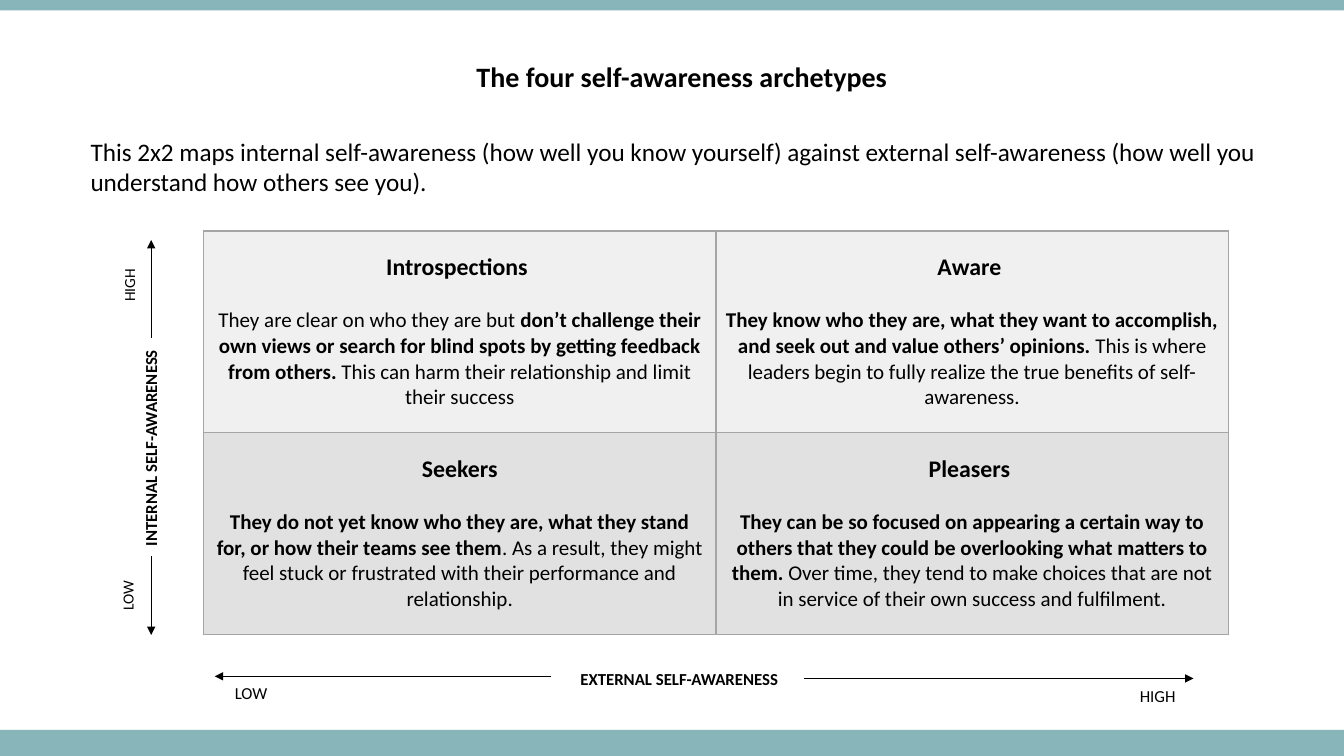
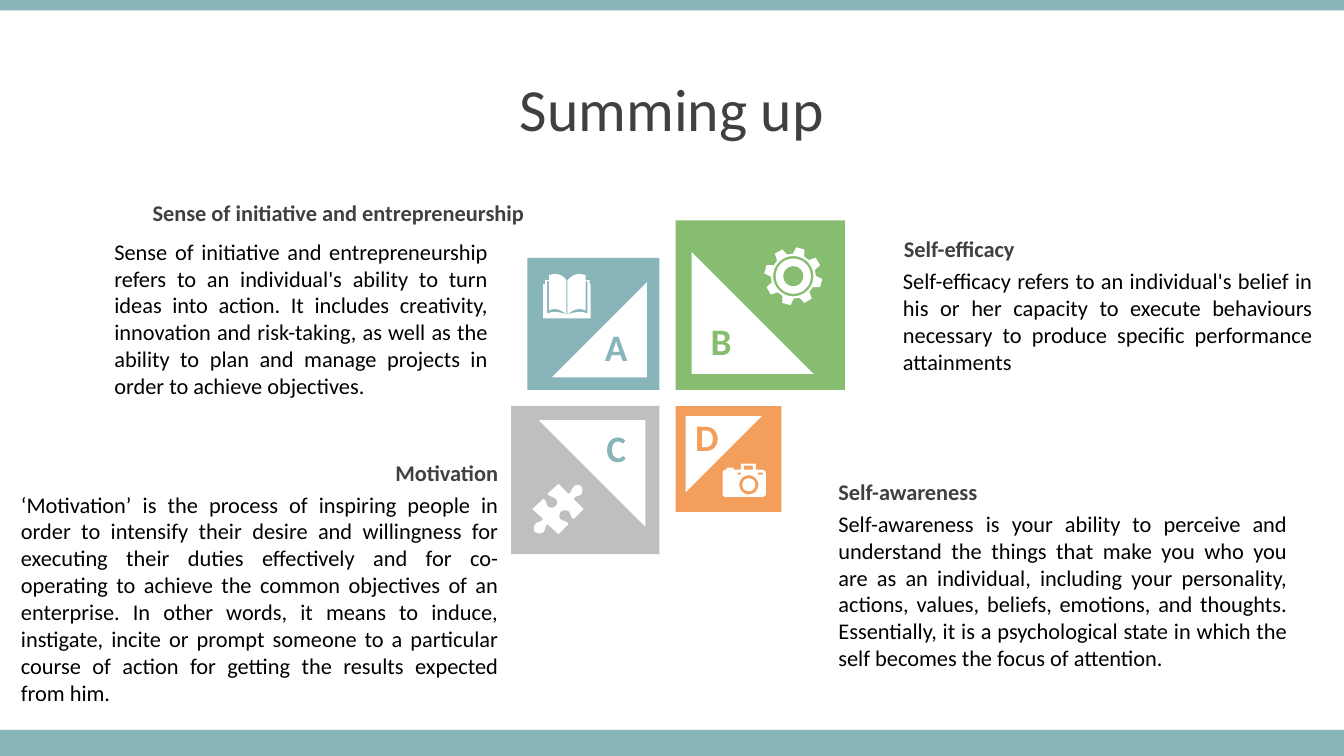
from math import cos, sin, radians
from lxml.etree import SubElement
from pptx import Presentation
from pptx.dml.color import RGBColor
from pptx.enum.shapes import MSO_CONNECTOR, MSO_SHAPE
from pptx.enum.text import MSO_ANCHOR, PP_ALIGN
from pptx.oxml.ns import qn
from pptx.util import Pt

FONT = "Calibri"
TEAL, GREEN, ORANGE, SILVER = "87B5BA", "86BD70", "F39E5A", "BFBFBF"
BLACK, WHITE, DARK, EDGE = "000000", "FFFFFF", "404040", "A5A5A5"
LEFT, MID, RIGHT, FULL = PP_ALIGN.LEFT, PP_ALIGN.CENTER, PP_ALIGN.RIGHT, PP_ALIGN.JUSTIFY


def paint(fill, hue):
    fill.solid()
    fill.fore_color.rgb = RGBColor.from_string(hue)


def write(par, runs, size, hue=BLACK, align=LEFT):
    par.alignment = align
    for words, bold in runs:
        run = par.add_run()
        run.text = words
        run.font.name = FONT
        run.font.size = Pt(size)
        run.font.bold = bold
        paint(run.font.fill, hue)


deck = Presentation()
deck.slide_width, deck.slide_height = Pt(960), Pt(540)
plain = deck.slide_layouts[5]
first, last = deck.slides.add_slide(plain), deck.slides.add_slide(plain)
solids = []

tree = deck.slide_master.shapes.element
for spot, (top, high) in enumerate([(521.3, 18.7), (0, 7.5)]):
    band = first.shapes.add_shape(MSO_SHAPE.RECTANGLE, Pt(0), Pt(top), Pt(960), Pt(high))
    band.name = f"Band {spot + 1}"
    band.element.xpath(".//p:cNvPr")[0].set("id", str(20 + spot))
    tree.insert(2 + spot, band.element)
    solids.append((band, TEAL))

titles = [
    (first, "The four self-awareness archetypes", 332.6, 38.9, 308.9, 31.7, 20, BLACK, True),
    (last, "Summing up", 0, 46.8, 960, 60.5, 42.7, DARK, False),
]
for page, words, left, top, wide, high, size, hue, bold in titles:
    title = page.shapes.title
    title.left, title.top, title.width, title.height = Pt(left), Pt(top), Pt(wide), Pt(high)
    title.text_frame.vertical_anchor = MSO_ANCHOR.MIDDLE
    write(title.text_frame.paragraphs[0], [(words, bold)], size, hue, MID)

cells = [
    ("Introspections ", [
        ("They are clear on who they are but ", False),
        ("don’t challenge their own views or search for blind spots by getting feedback from others.", True),
        (" This can harm their relationship and limit their success", False)]),
    ("Aware ", [
        ("They know who they are, what they want to accomplish, and seek out and value others’ opinions. ", True),
        ("This is where leaders begin to fully realize the true benefits of self-awareness.", False)]),
    ("Seekers", [
        ("They do not yet know who they are, what they stand for, or how their teams see them", True),
        (". As a result, they might feel stuck or frustrated with their performance and relationship.", False)]),
    ("Pleasers ", [
        ("They can be so focused on appearing a certain way to others that they could be overlooking what matters to them. ", True),
        ("Over time, they tend to make choices that are not in service of their own success and fulfilment.", False)]),
]
grid = first.shapes.add_table(2, 2, Pt(145.4), Pt(165), Pt(732), Pt(288)).table
grid.first_row = grid.horz_banding = False
for spot, (head, runs) in enumerate(cells):
    row, col = divmod(spot, 2)
    cell = grid.cell(row, col)
    props = cell._tc.get_or_add_tcPr()
    for side in ("lnL", "lnR", "lnT", "lnB"):
        edge = SubElement(props, qn("a:" + side), w=str(Pt(1)))
        SubElement(SubElement(edge, qn("a:solidFill")), qn("a:srgbClr"), val=EDGE)
    paint(cell.fill, ("F0F0F0", "E1E1E1")[row])
    cell.vertical_anchor = MSO_ANCHOR.MIDDLE
    frame = cell.text_frame
    write(frame.paragraphs[0], [(head, True)], 17, align=MID)
    par = frame.add_paragraph()
    par.space_before = Pt(18.3)
    write(par, runs, 15, align=MID)

arrows = [
    (393.8, 483.1, 153.4, 483.1),
    (574.6, 484.6, 852.5, 484.6),
    (108, 241.2, 108, 171.4),
    (108, 397.4, 108, 453.6),
]
for ends in arrows:
    arrow = first.shapes.add_connector(MSO_CONNECTOR.STRAIGHT, *map(Pt, ends))
    paint(arrow.line.fill, BLACK)
    arrow.line.width = Pt(0.5)
    SubElement(arrow.line._ln, qn("a:tailEnd"), type="triangle")
    SubElement(arrow.element.spPr, qn("a:effectLst"))

tiles = [
    (0, 0, 94.3, 270, TEAL),
    (1, 0, 121, 0, GREEN),
    (1, 1, 75.6, 90, ORANGE),
    (0, 1, 105.8, 180, SILVER),
]
for col, row, size, turn, hue in tiles:
    left = 482.5 if col else 471 - size
    top = 290 if row else 278.5 - size
    tile = last.shapes.add_shape(MSO_SHAPE.RECTANGLE, Pt(left), Pt(top), Pt(size), Pt(size))
    dx, dy = (size * (0.095 if far else 0.185) for far in (col, row))
    wedge = last.shapes.add_shape(
        MSO_SHAPE.RIGHT_TRIANGLE, Pt(left + dx), Pt(top + dy), Pt(size * 0.72), Pt(size * 0.72))
    wedge.rotation = turn
    solids += [(tile, hue), (wedge, WHITE)]

rings = [
    [(x + r * cos(radians(a)), y + r * sin(radians(a))) for a in range(0, 360, 10)]
    for x, y, r in [(29, 29, 20), (29, 29, 17.5), (29, 29, 10), (26, 21, 9.5), (26, 21, 6.5)]
]
teeth = [
    (29 + r * cos(radians(a + da)), 29 + r * sin(radians(a + da)))
    for a in range(-76, 284, 45)
    for r, da in [(22.3, -15), (28.8, -8.5), (28.8, 8.5), (22.3, 15)]
]
boxes = [
    [(x, y), (right, y), (right, low), (x, low)]
    for x, y, right, low in [(23, 6, 24, 40), (15, 9, 18, 11), (35, 9, 40, 11), (21, 2, 30, 6)]
]
book = [
    [(0, 10), (2, 10), (2, 6), (6, 6), (6, 1), (8, 0, 11, 0, 12, 0), (17, 0, 20, 2, 23, 6),
     (24, 6), (28, 2, 31, 0, 35, 0), (37, 0, 39, 0, 42, 1), (42, 6), (46, 6), (46, 10),
     (47, 10), (47, 44), (0, 44)],
    [(23, 40), (18, 35, 11, 33, 6, 36), (6, 7), (4, 7), (4, 39), (12, 36, 16, 38, 23, 40)],
    [(24, 40), (30, 35, 36, 33, 42, 36), (42, 7), (44, 7), (44, 39), (36, 36, 32, 38, 24, 40)],
    boxes[0],
]
puzzle = [
    [(48, 2), (50, 4, 50, 7, 49, 10), (46, 13, 43, 11, 41, 15), (51, 25), (41, 35),
     (37, 33, 39, 30, 36, 27), (33, 26, 30, 26, 28, 28), (27, 29, 26, 33, 28, 35),
     (32, 38, 33, 36, 36, 40), (26, 50), (15, 40), (12, 43, 14, 44, 11, 48),
     (8, 50, 5, 49, 3, 48), (1, 46, 1, 43, 3, 40), (5, 37, 8, 39, 11, 35), (0, 25), (11, 15),
     (15, 17, 13, 20, 16, 23), (18, 24, 22, 24, 23, 22), (25, 21, 26, 17, 23, 15),
     (20, 12, 19, 14, 15, 10), (26, 0), (36, 10), (40, 7, 38, 6, 41, 3), (43, 0, 47, 1, 48, 2)],
]
camera = [
    [(19, 0), (32, 0), (33, 1), (33, 6), (39, 6), (41, 6, 43, 8, 43, 9), (43, 30),
     (43, 32, 41, 33, 39, 33), (3, 33), (1, 33, 0, 32, 0, 30), (0, 9), (0, 8, 1, 6, 3, 6),
     (4, 6), (4, 4), (11, 4), (11, 6), (18, 6), (18, 1)],
    *boxes[1:], *rings[3:],
]
icons = [
    (388, 195.8, book),
    (380.2, 345.6, puzzle),
    (545.8, 176.4, [teeth, *rings[:3]]),
    (516.2, 331.2, camera),
]
for left, top, loops in icons:
    pen = None
    for loop in loops:
        dots = []
        for step in loop:
            if len(step) == 2:
                dots.append(step)
                continue
            ax, ay = dots[-1]
            bx, by, cx, cy, ex, ey = step
            for t in (0.2, 0.4, 0.6, 0.8, 1):
                u = 1 - t
                k = (u ** 3, 3 * u * u * t, 3 * u * t * t, t ** 3)
                dots.append((k[0] * ax + k[1] * bx + k[2] * cx + k[3] * ex,
                             k[0] * ay + k[1] * by + k[2] * cy + k[3] * ey))
        dots = [(x * 10, y * 10) for x, y in dots]
        if pen:
            pen.move_to(*dots[0])
        else:
            pen = last.shapes.build_freeform(*dots[0], scale=Pt(0.072))
        pen.add_line_segments(dots[1:], close=True)
    solids.append((pen.convert_to_shape(Pt(left), Pt(top)), WHITE))

for shape, hue in solids:
    paint(shape.fill, hue)
    shape.line.fill.background()
    shape.shadow.inherit = False

notes = [
    (first, 57.6, 93.6, 880, 51, 0, 18, BLACK, False, LEFT,
     "This 2x2 maps internal self-awareness (how well you know yourself) against external self-awareness (how well you understand how others see you)."),
    (first, 407.5, 474.5, 180, 21.6, 0, 12, BLACK, True, LEFT, "EXTERNAL SELF-AWARENESS"),
    (first, 29.5, 308.2, 156.2, 21.6, 270, 12, BLACK, True, LEFT, "INTERNAL SELF-AWARENESS"),
    (first, 160.6, 484.3, 54, 21.6, 0, 12, BLACK, False, LEFT, "LOW"),
    (first, 807.1, 486, 45.4, 21.6, 0, 12, BLACK, False, LEFT, "HIGH"),
    (first, 64.4, 405.7, 54, 21, 270, 11, BLACK, False, LEFT, "LOW"),
    (first, 63.4, 182.9, 58.3, 21, 270, 11, BLACK, False, LEFT, "HIGH"),
    (last, 419, 228.2, 42.5, 39.6, 0, 26.7, TEAL, True, MID, "A"),
    (last, 493.9, 223.9, 42.5, 39.6, 0, 26.7, GREEN, True, MID, "B"),
    (last, 419, 300.2, 42.5, 39.6, 0, 26.7, TEAL, True, MID, "C"),
    (last, 483.8, 292.3, 42.5, 39.6, 0, 26.7, ORANGE, True, MID, "D"),
    (last, 39.6, 139, 342, 26.6, 0, 16, DARK, True, RIGHT, "Sense of initiative and entrepreneurship"),
    (last, 96.5, 324.7, 266.4, 26.6, 0, 16, DARK, True, RIGHT, "Motivation"),
    (last, 638.6, 164.2, 266.4, 26.6, 0, 16, DARK, True, LEFT, "Self-efficacy"),
    (last, 591.8, 337.7, 266.4, 26.6, 0, 16, DARK, True, LEFT, "Self-awareness"),
    (last, 74.6, 166.3, 281, 124, 0, 16, BLACK, False, FULL,
     "Sense of initiative and entrepreneurship refers to an individual's ability to turn ideas into action. It includes creativity, innovation and risk-taking, as well as the ability to plan and manage projects in order to achieve objectives."),
    (last, 637.9, 187.2, 306.7, 85, 0, 16, BLACK, False, FULL,
     "Self-efficacy refers to an individual's belief in his or her capacity to execute behaviours necessary to produce specific performance attainments"),
    (last, 591.8, 360.7, 334.8, 124, 0, 16, BLACK, False, FULL,
     "Self-awareness is your ability to perceive and understand the things that make you who you are as an individual, including your personality, actions, values, beliefs, emotions, and thoughts. Essentially, it is a psychological state in which the self becomes the focus of attention."),
    (last, 7.9, 347, 355.3, 162.7, 0, 16, BLACK, False, FULL,
     "‘Motivation’ is the process of inspiring people in order to intensify their desire and willingness for executing their duties effectively and for co-operating to achieve the common objectives of an enterprise. In other words, it means to induce, instigate, incite or prompt someone to a particular course of action for getting the results expected from him."),
]
for page, left, top, wide, high, turn, size, hue, bold, align, words in notes:
    note = page.shapes.add_textbox(Pt(left), Pt(top), Pt(wide), Pt(high))
    note.rotation = turn
    note.text_frame.word_wrap = True
    write(note.text_frame.paragraphs[0], [(words, bold)], size, hue, align)

deck.save("out.pptx")
